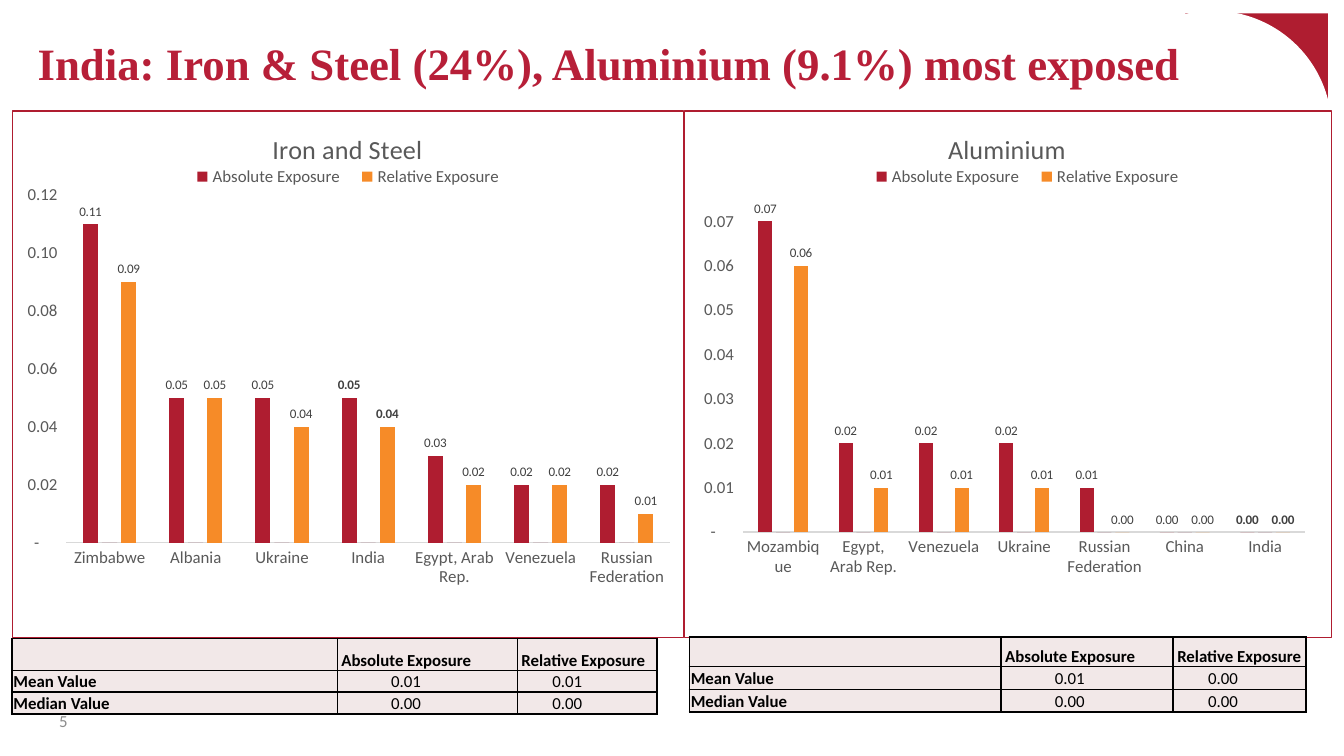
from dataclasses import dataclass

from pptx import Presentation
from pptx import util as u
from pptx.chart import data
from pptx.dml.color import RGBColor
from pptx.enum import chart as charts, shapes, text
from pptx.oxml import parse_xml
from pptx.oxml.ns import nsdecls, qn
from pptx.oxml.xmlchemy import OxmlElement


@dataclass(frozen=True)
class Theme:
    heading_font: str = "Times New Roman"
    body_font: str = "Calibri"
    red: str = "AF1D30"
    title_red: str = "B71F38"
    plum: str = "853046"
    orange: str = "F68B28"
    blush: str = "F2E8E8"
    white: str = "FFFFFF"
    black: str = "000000"
    gray: str = "595959"
    label_gray: str = "404040"
    page_gray: str = "8C8C8C"
    axis_gray: str = "D9D9D9"
    heading: float = 24
    chart_title: float = 14
    body: float = 9
    label: float = 7


class ExposureSlide:
    """Draw the elements of an exposure slide in one theme."""

    def __init__(self, slide, theme):
        self.slide = slide
        self.theme = theme

    def apply(self, target, values):
        for name, value in values.items():
            setattr(target, name, value)

    def style(self, font, size, color, bold=False, name=None):
        self.apply(font, {"size": u.Pt(size), "bold": bold, "name": name or self.theme.body_font})
        font.color.rgb = RGBColor.from_string(color)

    def paint(self, fill, color):
        fill.solid()
        fill.fore_color.rgb = RGBColor.from_string(color)

    def shape(self, kind, box, color):
        shape = self.slide.shapes.add_shape(kind, *map(u.Inches, box))
        shape.shadow.inherit = False
        self.paint(shape.fill, color)
        shape.line.fill.background()

    def text(self, box, words, size, color, **font):
        frame = self.slide.shapes.add_textbox(*map(u.Inches, box)).text_frame
        self.apply(frame, {
            "word_wrap": True, "vertical_anchor": text.MSO_ANCHOR.MIDDLE,
            "margin_left": 0, "margin_right": 0,
            "margin_top": u.Inches(0.06), "margin_bottom": u.Inches(0.06),
        })
        paragraph = frame.paragraphs[0]
        paragraph.line_spacing = 0.9
        run = paragraph.add_run()
        run.text = words
        self.style(run.font, size, color, **font)

    def place(self, element, index, values, inner=False):
        for old in element.findall(qn("c:layout")):
            element.remove(old)
        target = '<c:layoutTarget val="inner"/>' if inner else ""
        modes = "".join(f'<c:{axis}Mode val="edge"/>' for axis in "xy")
        sizes = "".join(f'<c:{name} val="{value}"/>' for name, value in zip("xywh", values))
        element.insert(index, parse_xml(
            f'<c:layout {nsdecls("c")}><c:manualLayout>{target}{modes}{sizes}'
            "</c:manualLayout></c:layout>"))

    def chart(self, box, title, categories, absolute, relative, top, step, layouts):
        theme = self.theme
        chart_data = data.CategoryChartData(number_format="0.00")
        chart_data.categories = categories
        chart_data.add_series("Absolute Exposure", absolute)
        chart_data.add_series("Series 2", [0] * len(categories))
        chart_data.add_series("Relative Exposure", relative)
        chart = self.slide.shapes.add_chart(
            charts.XL_CHART_TYPE.COLUMN_CLUSTERED, *map(u.Inches, box), chart_data).chart
        self.style(chart.font, theme.body, theme.gray)
        self.border(chart)

        chart.has_title = True
        frame = chart.chart_title.text_frame
        frame.text = title
        self.style(frame.paragraphs[0].runs[0].font, theme.chart_title, theme.gray)
        self.place(chart.chart_title._element, 1, layouts["title"])

        chart.has_legend = True
        legend = chart.legend
        self.apply(legend, {"position": charts.XL_LEGEND_POSITION.BOTTOM, "include_in_layout": False})
        self.style(legend.font, theme.body, theme.gray)
        self.place(legend._element, 1, layouts["legend"])
        legend._element.insert(1, parse_xml(
            f'<c:legendEntry {nsdecls("c")}><c:idx val="1"/><c:delete val="1"/></c:legendEntry>'))

        self.axes(chart, top, step)
        plot = chart.plots[0]
        self.apply(plot, {"gap_width": 219, "overlap": -27, "vary_by_categories": False})
        self.place(chart._chartSpace.chart.plotArea, 0, layouts["plot"], inner=True)
        for series, color in zip(plot.series, (theme.red, theme.plum, theme.orange)):
            self.paint(series.format.fill, color)
        for series in (plot.series[0], plot.series[2]):
            self.labels(series, categories.index("India"))

    def border(self, chart):
        chart._chartSpace.chart.addnext(parse_xml(
            f'<c:spPr {nsdecls("c", "a")}><a:noFill/><a:ln w="{u.Pt(0.75)}"><a:solidFill>'
            f'<a:srgbClr val="{self.theme.red}"/></a:solidFill></a:ln></c:spPr>'))

    def axes(self, chart, top, step):
        for axis in (chart.category_axis, chart.value_axis):
            self.apply(axis, {
                "has_major_gridlines": False,
                "major_tick_mark": charts.XL_TICK_MARK.NONE,
                "minor_tick_mark": charts.XL_TICK_MARK.NONE,
            })
            self.style(axis.tick_labels.font, self.theme.body, self.theme.gray)
        line = chart.category_axis.format.line
        line.width = u.Pt(0.75)
        self.paint(line.fill, self.theme.axis_gray)
        axis = chart.value_axis
        self.apply(axis, {"minimum_scale": 0, "maximum_scale": top, "major_unit": step})
        self.apply(axis.tick_labels, {"number_format": '0.00_);(0.00);"-"??_)', "number_format_is_linked": False})
        axis.format.line.fill.background()

    def labels(self, series, bold_index):
        labels = series.data_labels
        position = charts.XL_LABEL_POSITION.OUTSIDE_END
        self.apply(labels, {
            "show_value": True, "number_format": "0.00",
            "number_format_is_linked": False, "position": position,
        })
        self.style(labels.font, self.theme.label, self.theme.label_gray)
        label = series.points[bold_index].data_label
        self.style(label.font, self.theme.label, self.theme.label_gray, bold=True)
        label.position = position

    def table(self, box, widths, heights, rows):
        table = self.slide.shapes.add_table(len(rows), len(widths), *map(u.Inches, box)).table
        self.apply(table, {"first_row": False, "horz_banding": False})
        for column, width in zip(table.columns, widths):
            column.width = u.Inches(width)
        for row, height in zip(table.rows, heights):
            row.height = u.Inches(height)
        value_indents = (0.01, 0.4, 0.26)
        for r, row in enumerate(rows):
            for c, words in enumerate(row):
                indent = 0.03 if r == 0 else value_indents[c]
                self.cell(table.cell(r, c), words, indent, bold=r == 0 or c == 0)

    def cell(self, cell, words, indent, bold):
        self.apply(cell, {
            "vertical_anchor": text.MSO_ANCHOR.BOTTOM, "margin_left": u.Inches(indent),
            "margin_right": u.Inches(0.01), "margin_top": u.Inches(0.01), "margin_bottom": 0,
        })
        self.paint(cell.fill, self.theme.blush)
        paragraph = cell.text_frame.paragraphs[0]
        if words:
            run = paragraph.add_run()
            run.text = words
            self.style(run.font, self.theme.body, self.theme.black, bold)
        else:
            ending = OxmlElement("a:endParaRPr")
            ending.set("sz", str(self.theme.body * 100))
            paragraph._p.append(ending)
        properties = cell._tc.get_or_add_tcPr()
        for index, side in enumerate("LRTB"):
            properties.insert(index, parse_xml(
                f'<a:ln{side} {nsdecls("a")} w="{u.Pt(1)}"><a:solidFill>'
                f'<a:srgbClr val="{self.theme.black}"/></a:solidFill></a:ln{side}>'))


def main():
    presentation = Presentation()
    presentation.slide_width, presentation.slide_height = u.Inches(10), u.Inches(10 * 9 / 16)
    theme = Theme()
    page = ExposureSlide(presentation.slides.add_slide(presentation.slide_layouts[6]), theme)
    page.shape(shapes.MSO_SHAPE.RECTANGLE, (8.82, 0.1, 1.06, 1.06), theme.red)
    page.shape(shapes.MSO_SHAPE.OVAL, (8.14, 0.08, 1.77, 1.77), theme.white)
    page.text((0.28, 0, 9.45, 0.98), "India: Iron & Steel (24%), Aluminium (9.1%) most exposed",
              theme.heading, theme.title_red, bold=True, name=theme.heading_font)
    page.text((0.44, 5.22, 0.43, 0.31), "5", theme.body, theme.page_gray)

    page.chart(
        (0.09, 0.82, 5, 3.93), "Iron and Steel",
        ["Zimbabwe", "Albania", "Ukraine", "India", "Egypt, Arab Rep.", "Venezuela", "Russian Federation"],
        [0.11, 0.05, 0.05, 0.05, 0.03, 0.02, 0.02], [0.09, 0.05, 0.04, 0.04, 0.02, 0.02, 0.01],
        0.12, 0.02,
        {"title": (0.38, 0.03), "legend": (0.25, 0.1, 0.5, 0.05), "plot": (0.08, 0.16, 0.9, 0.66)})
    page.chart(
        (5.09, 0.82, 4.82, 3.93), "Aluminium",
        ["Mozambique", "Egypt, Arab Rep.", "Venezuela", "Ukraine", "Russian Federation", "China", "India"],
        [0.07, 0.02, 0.02, 0.02, 0.01, 0, 0], [0.06, 0.01, 0.01, 0.01, 0, 0, 0],
        0.07, 0.01,
        {"title": (0.4, 0.03), "legend": (0.27, 0.1, 0.52, 0.05), "plot": (0.09, 0.21, 0.87, 0.59)})

    header = ["", "Absolute Exposure", "Relative Exposure"]
    median = ["Median Value", "0.00", "0.00"]
    page.table((0.09, 4.75, 4.8, 0.56), (2.42, 1.34, 1.04), (0.24, 0.16, 0.16),
               [header, ["Mean Value", "0.01", "0.01"], median])
    page.table((5.13, 4.74, 4.59, 0.56), (2.32, 1.28, 0.99), (0.22, 0.17, 0.17),
               [header, ["Mean Value", "0.01", "0.00"], median])
    presentation.save("out.pptx")


if __name__ == "__main__":
    main()
